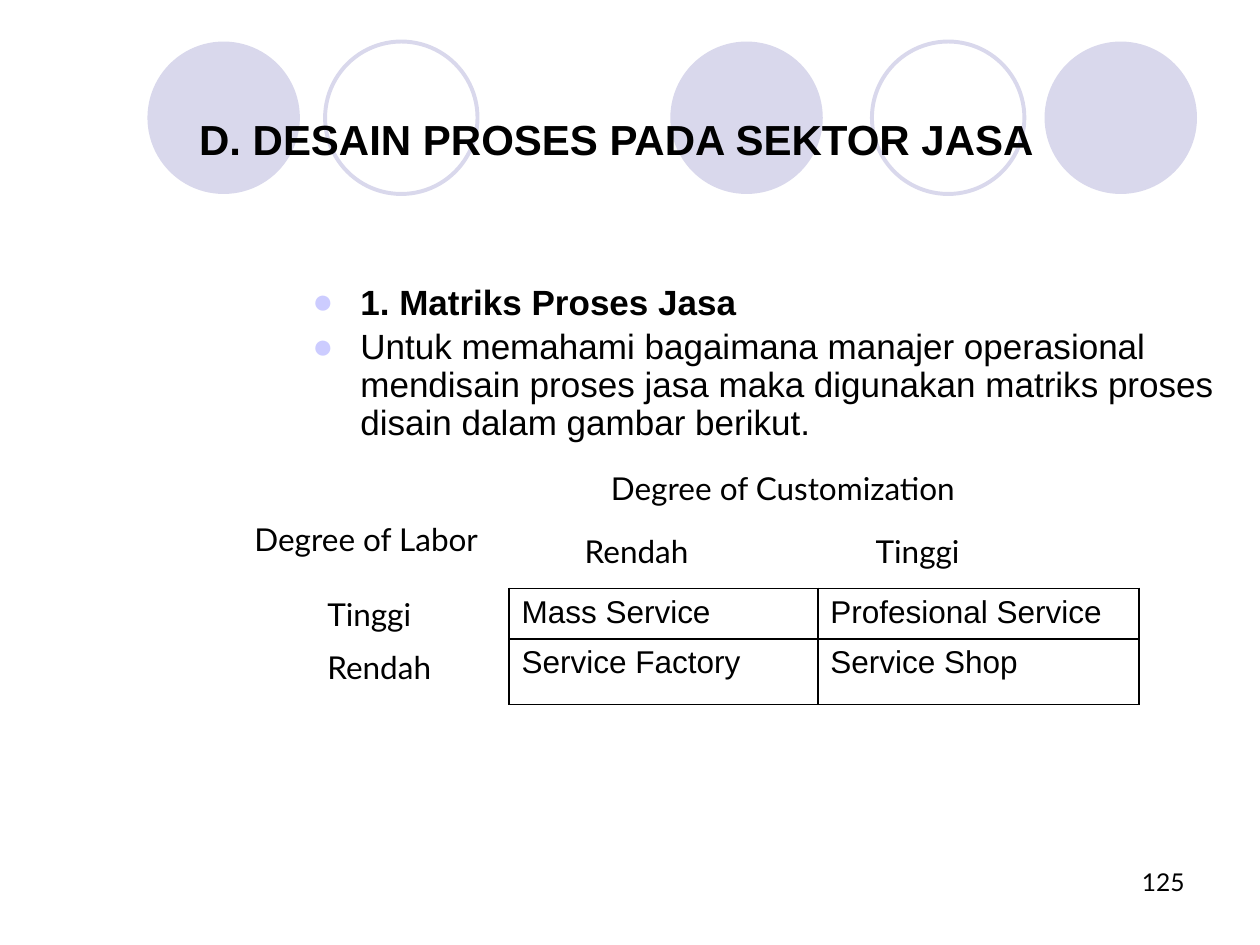
from lxml import etree
from pptx import Presentation
from pptx.dml.color import RGBColor
from pptx.enum.shapes import MSO_SHAPE
from pptx.enum.text import MSO_ANCHOR, PP_ALIGN
from pptx.oxml.ns import qn
from pptx.util import Inches, Pt

OVAL = MSO_SHAPE.OVAL
MIDDLE = MSO_ANCHOR.MIDDLE
LEFT, RIGHT = PP_ALIGN.LEFT, PP_ALIGN.RIGHT
BLACK, LAVENDER, BULLET = "000000", "D9D8EC", "CCCCFF"


def style(paragraph, size, face, bold=False, align=LEFT):
    paragraph.alignment = align
    paragraph.font.size = Pt(size)
    paragraph.font.name = face
    paragraph.font.bold = bold
    paragraph.font.color.rgb = RGBColor.from_string(BLACK)


def add_label(x, y, w, h, lines, size=18, align=LEFT):
    frame = slide.shapes.add_textbox(Inches(x), Inches(y), Inches(w), Inches(h)).text_frame
    frame.word_wrap = True
    frame.text = "\n".join(lines)
    for i, paragraph in enumerate(frame.paragraphs):
        paragraph.space_before = Pt(size / 2 if i else 0)
        style(paragraph, size, "Lato", align=align)
    return frame


prs = Presentation()
prs.slide_width, prs.slide_height = Inches(10), Inches(7.5)
slide = prs.slides.add_slide(prs.slide_layouts[1])
title, body = slide.placeholders

# Row of circles behind the title
for x, filled in [(1.17, True), (2.58, False), (5.32, True), (6.92, False), (8.29, True)]:
    circle = slide.shapes.add_shape(OVAL, Inches(x), Inches(0.33), Inches(1.21), Inches(1.21))
    circle.shadow.inherit = False
    if filled:
        circle.fill.solid()
        circle.fill.fore_color.rgb = RGBColor.from_string(LAVENDER)
        circle.line.fill.background()
    else:
        circle.fill.background()
        circle.line.color.rgb = RGBColor.from_string(LAVENDER)
        circle.line.width = Pt(2.25)
    title._element.addprevious(circle._element)

title.left, title.top, title.width, title.height = map(Inches, (1.48, 0.23, 8.52, 1.6))
title.text_frame.text = "D. DESAIN PROSES PADA SEKTOR JASA"
title.text_frame.vertical_anchor = MIDDLE
title.text_frame.margin_top = Inches(0.19)
style(title.text_frame.paragraphs[0], 24, "Arial", bold=True)

body.left, body.top, body.width, body.height = map(Inches, (2.38, 2.21, 7.62, 1.38))
body.text_frame.text = (
    "1. Matriks Proses Jasa\n"
    "Untuk memahami bagaimana manajer operasional mendisain proses jasa "
    "maka digunakan matriks proses disain dalam gambar berikut."
)
for i, point in enumerate(body.text_frame.paragraphs):
    point.line_spacing = 0.9
    point.space_before = Pt(4 if i else 0)
    props = point._p.get_or_add_pPr()
    props.set("marL", str(Inches(0.38)))
    props.set("indent", str(-Inches(0.38)))
    colour = etree.SubElement(props, qn("a:buClr"))
    etree.SubElement(colour, qn("a:srgbClr"), val=BULLET)
    etree.SubElement(props, qn("a:buChar"), char="●")
    style(point, 20, "Arial", bold=i == 0)

# Service process matrix
services = [["Mass Service", "Profesional Service"], ["Service Factory", "Service Shop"]]
matrix = slide.shapes.add_table(2, 2, Inches(4.04), Inches(4.67), Inches(5), Inches(0.92)).table
matrix.first_row = matrix.horz_banding = False
for column, width in zip(matrix.columns, (2.45, 2.55)):
    column.width = Inches(width)
for r, height in enumerate((0.4, 0.52)):
    matrix.rows[r].height = Inches(height)
    for c, service in enumerate(services[r]):
        cell = matrix.cell(r, c)
        cell.text = service
        style(cell.text_frame.paragraphs[0], 18, "Arial")
        cell_props = cell._tc.get_or_add_tcPr()
        for side in ("lnL", "lnR", "lnT", "lnB"):
            border = etree.SubElement(cell_props, qn(f"a:{side}"), w=str(Pt(1)))
            paint = etree.SubElement(border, qn("a:solidFill"))
            etree.SubElement(paint, qn("a:srgbClr"), val=BLACK)
        cell.fill.background()

# Axis labels around the matrix
add_label(4.75, 3.67, 3, 0.4, ["Degree of Customization"])
levels = add_label(4.42, 4.17, 4.25, 0.4, ["Rendah\tTinggi"])
levels.margin_left = Inches(0.22)
level_props = levels.paragraphs[0]._p.get_or_add_pPr()
tabs = etree.SubElement(level_props, qn("a:tabLst"))
etree.SubElement(tabs, qn("a:tab"), pos=str(Inches(2.31)), algn="l")
level_props.find(qn("a:defRPr")).addprevious(tabs)
add_label(1.92, 4.08, 2, 0.4, ["Degree of Labor"])
add_label(2.5, 4.67, 1.33, 0.85, ["Tinggi", "Rendah"])

add_label(7.17, 6.83, 2.33, 0.5, ["125"], size=14, align=RIGHT)

prs.save("out.pptx")
